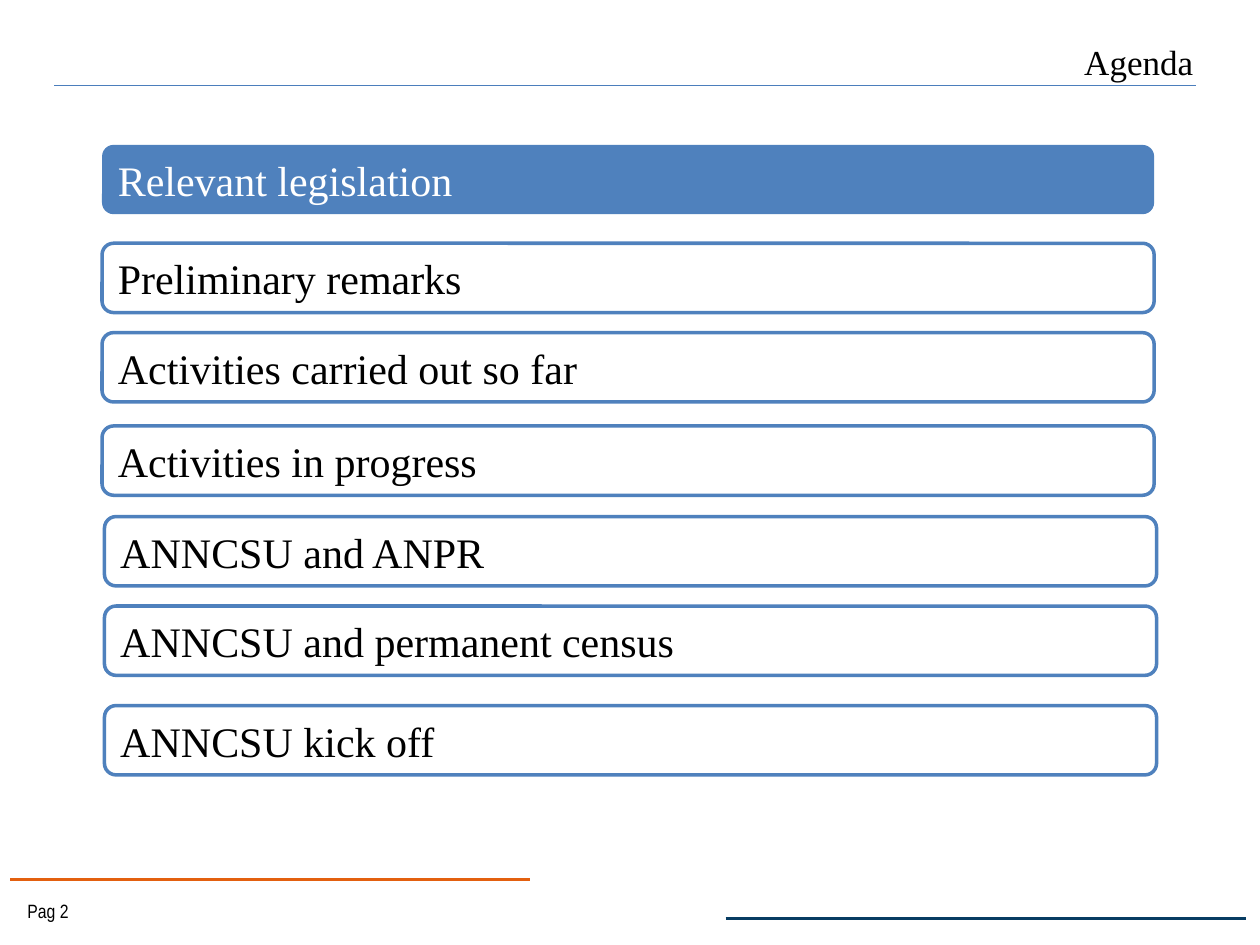
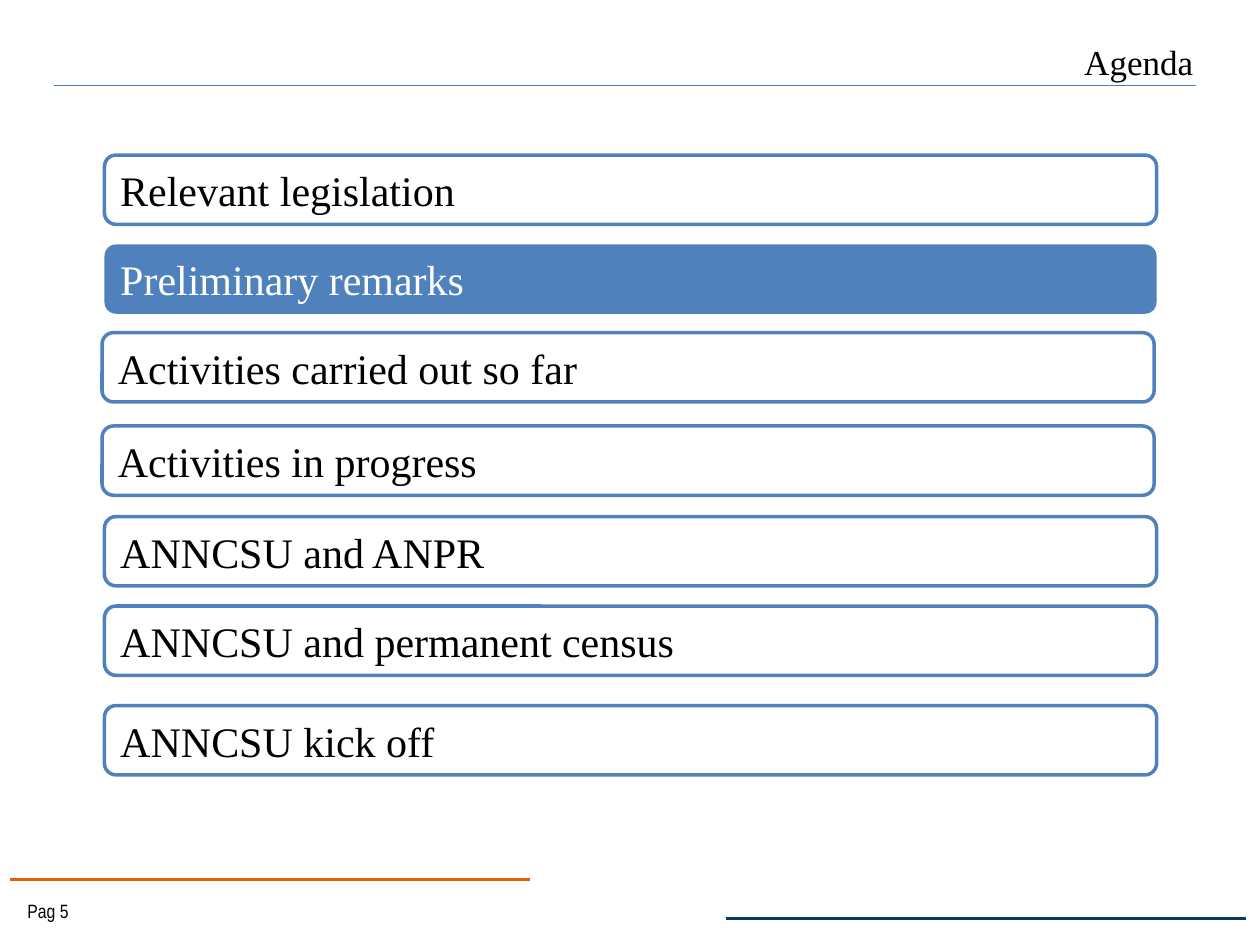
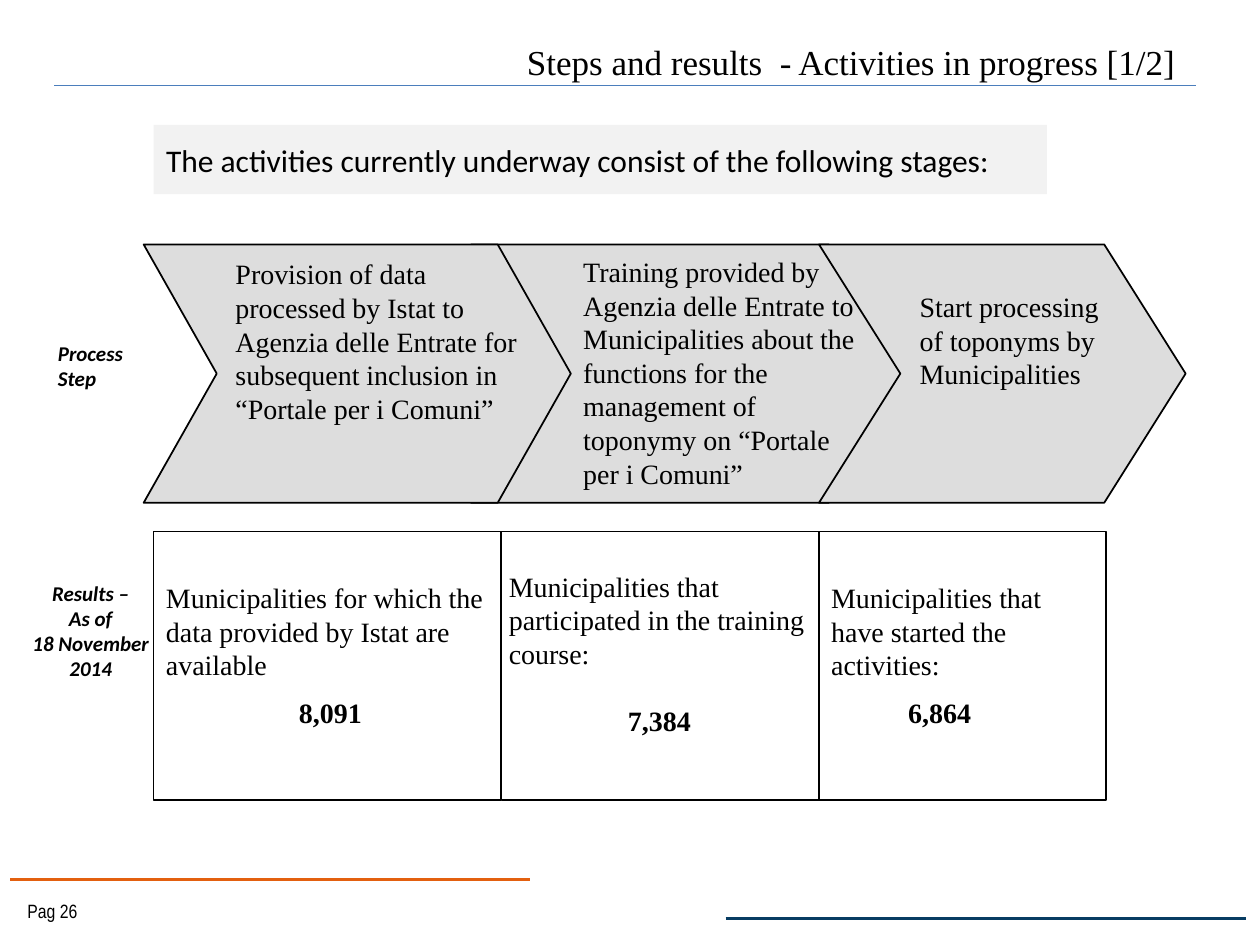
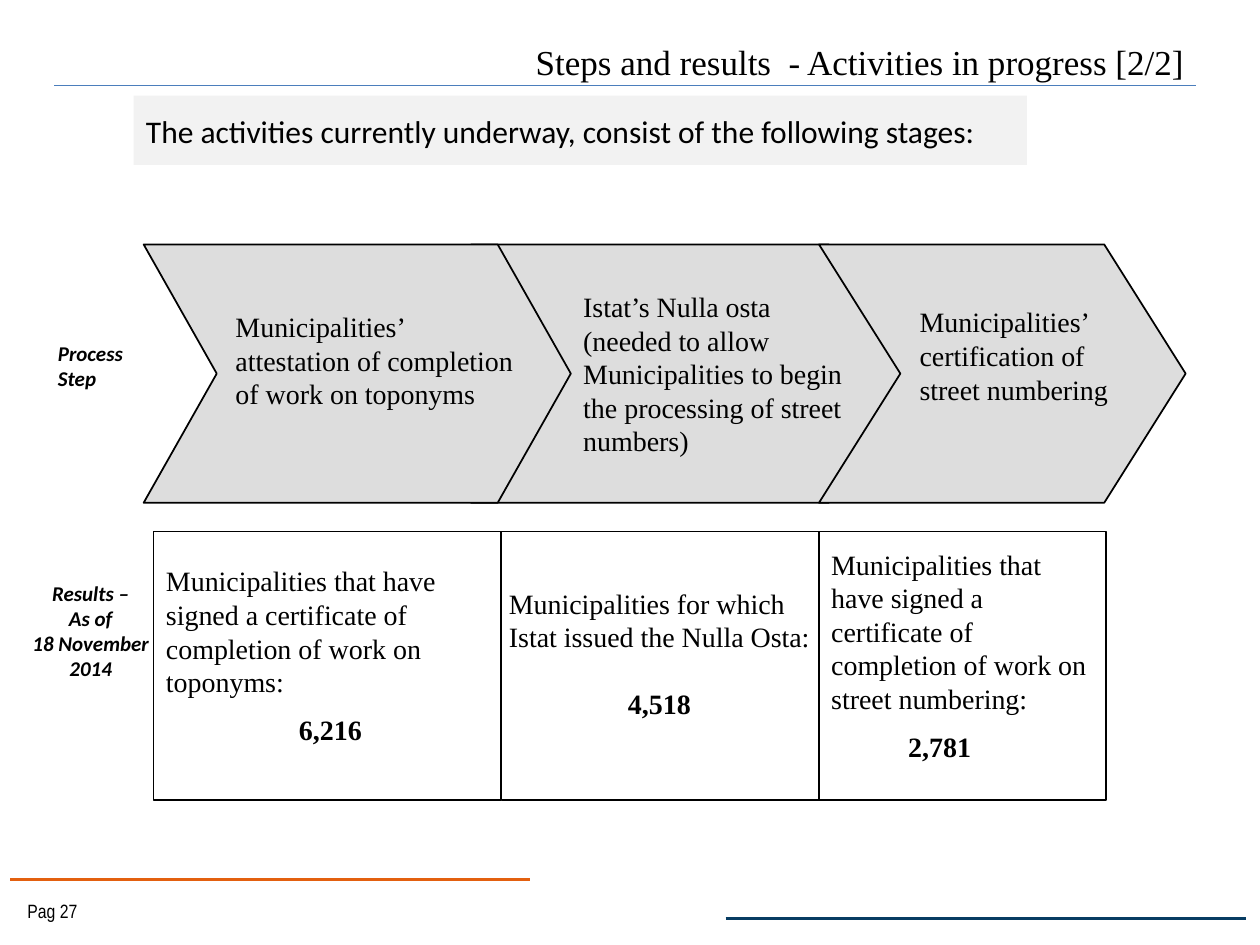
from dataclasses import dataclass

from lxml import etree
from pptx import Presentation
from pptx.dml.color import RGBColor
from pptx.enum.shapes import MSO_CONNECTOR, MSO_SHAPE
from pptx.enum.text import MSO_ANCHOR, PP_ALIGN
from pptx.oxml.ns import qn
from pptx.util import Pt

STRAIGHT = MSO_CONNECTOR.STRAIGHT
RECTANGLE = MSO_SHAPE.RECTANGLE
ROUNDED = MSO_SHAPE.ROUNDED_RECTANGLE
CHEVRON = MSO_SHAPE.CHEVRON
TOP, MIDDLE = MSO_ANCHOR.TOP, MSO_ANCHOR.MIDDLE
LEFT, CENTER, RIGHT = PP_ALIGN.LEFT, PP_ALIGN.CENTER, PP_ALIGN.RIGHT

SERIF, SANS, NARROW = "Times New Roman", "Calibri", "Arial Narrow"
BLACK, WHITE = "000000", "FFFFFF"
BLUE, RULE_BLUE = "4F81BD", "4B7EBC"
ORANGE, NAVY = "E3600F", "073C62"
PALE_GREY, STEP_GREY = "F2F2F2", "DDDDDD"
MARGINS = (7.2, 3.6, 7.2, 3.6)
NO_MARGINS = (0, 0, 0, 0)

AGENDA = [
    "Relevant legislation",
    "Preliminary remarks",
    "Activities carried out so far",
    "Activities in progress",
    "ANNCSU and ANPR",
    "ANNCSU and permanent census",
    "ANNCSU kick off",
]


@dataclass
class Box:
    """A region in points."""
    left: float
    top: float
    width: float
    height: float

    def inner(self, left, top, width, height):
        """A region placed from this one's top left corner."""
        return Box(self.left + left, self.top + top, width, height)

    def lengths(self):
        return [Pt(value) for value in (self.left, self.top, self.width, self.height)]


# Agenda positions: the lower rows are the same on both agenda slides.
ROW_SIZE = (601.2, 39.6)
LOWER_ROWS = [(0, 107.3), (0, 160.6), (1.4, 212.4), (1.4, 263.5), (1.4, 320.4)]
AGENDA_BOX = Box(58.3, 82.8, 602.6, 360)

STEPS_BOX = Box(82.1, 139.7, 595.4, 147.6)
RESULTS_BOX = Box(87.8, 303.8, 544.3, 153.4)


def color(value):
    return RGBColor.from_string(value)


def set_text(shape, lines, size, font=SERIF, text_color=BLACK, align=LEFT,
             anchor=TOP, margins=MARGINS, emphasis=None):
    frame = shape.text_frame
    frame.word_wrap = True
    frame.vertical_anchor = anchor
    (frame.margin_left, frame.margin_top,
     frame.margin_right, frame.margin_bottom) = [Pt(margin) for margin in margins]
    frame.text = "\n".join(lines)
    for paragraph in frame.paragraphs:
        paragraph.alignment = align
        paragraph.font.name = font
        paragraph.font.size = Pt(size)
        paragraph.font.bold = emphasis
        paragraph.font.italic = emphasis
        paragraph.font.color.rgb = color(text_color)
    return frame


def add_text(slide, box, lines, size, **style):
    set_text(slide.shapes.add_textbox(*box.lengths()), lines, size, **style)


def add_panel(slide, kind, box, fill=None, line=None, line_width=1):
    shape = slide.shapes.add_shape(kind, *box.lengths())
    shape.shadow.inherit = False
    if fill:
        shape.fill.solid()
        shape.fill.fore_color.rgb = color(fill)
    else:
        shape.fill.background()
    if line:
        shape.line.color.rgb = color(line)
        shape.line.width = Pt(line_width)
    else:
        shape.line.fill.background()
    return shape


def add_rule(slide, left, right, top, line, width):
    rule = slide.shapes.add_connector(STRAIGHT, Pt(left), Pt(top), Pt(right), Pt(top))
    rule.line.color.rgb = color(line)
    rule.line.width = Pt(width)
    etree.SubElement(rule.element.spPr, qn("a:effectLst"))


def add_base_slide(presentation, title, page, title_gap=0):
    """Blank slide with title, rules and page number; title_gap moves the title left."""
    slide = presentation.slides.add_slide(presentation.slide_layouts[6])
    add_rule(slide, 31, 683.3, 49, RULE_BLUE, 0.75)
    add_rule(slide, 5.8, 303.1, 502.6, ORANGE, 2)
    add_rule(slide, 414.7, 712.1, 524.9, NAVY, 2)
    add_text(slide, Box(8.6, 510.5, 84.2, 20.2), [f"Pag {page}"], 11, font=NARROW)
    add_text(slide, Box(77, 15.1, 612, 39.6), [title], 20, align=RIGHT,
             anchor=MIDDLE, margins=(7.2, 3.6, 7.2 + title_gap, 3.6))
    return slide


def draw_agenda(slide, box, positions, current):
    for index, (topic, (left, top)) in enumerate(zip(AGENDA, positions)):
        row = box.inner(left, top, *ROW_SIZE)
        if index == current:
            shape = add_panel(slide, ROUNDED, row, fill=BLUE)
        else:
            fill = WHITE if index < 3 else None
            shape = add_panel(slide, ROUNDED, row, fill, BLUE, 2)
        set_text(shape, [topic], 24, anchor=MIDDLE,
                 text_color=WHITE if index == current else BLACK)


def draw_intro(slide, box, sentence):
    banner = add_panel(slide, RECTANGLE, box, PALE_GREY)
    set_text(banner, [sentence], 18, font=SANS, anchor=MIDDLE, margins=(7.2, 0, 7.2, 0))


def draw_steps(slide, box, steps):
    """Three overlapping chevrons, the first in front; steps are (text, top) pairs."""
    chevrons = [(187.2, 249.1, 0.304), (385.9, 209.5, 0.315), (0, 244.1, 0.283)]
    for left, width, point in chevrons:
        chevron = add_panel(slide, CHEVRON, box.inner(left, 0, width, box.height),
                            STEP_GREY, BLACK)
        chevron.adjustments[0] = point
    columns = [(45.4, 175.7), (244.1, 169.9), (436.3, 130.3)]
    for (text, top), (left, width) in zip(steps, columns):
        add_text(slide, box.inner(left, top, width, box.height - top), [text], 16)


def draw_results(slide, box, results):
    """Adjoining panels, each with a sentence and an indented bold count."""
    outer = (7.2, 3.6, 7.2, 16)
    middle = (4.3, 3.6, 4.3, 18)
    columns = [(198.7, outer, 8, 76), (181.4, middle, 19, 68), (164.2, outer, 8, 44)]
    left = 0
    for (text, count), (width, margins, gap, indent) in zip(results, columns):
        panel = add_panel(slide, RECTANGLE, box.inner(left, 0, width, box.height),
                          WHITE, BLACK)
        frame = set_text(panel, [text, count], 16, anchor=MIDDLE, margins=margins)
        total = frame.paragraphs[1]
        total.space_before = Pt(gap)
        total.font.bold = True
        total._p.get_or_add_pPr().set("marL", str(Pt(indent)))
        left += width


def draw_row_labels(slide):
    style = dict(font=SANS, anchor=MIDDLE, margins=NO_MARGINS, emphasis=True)
    add_text(slide, Box(33.1, 194.4, 60.5, 28.8), ["Process Step"], 12, **style)
    add_text(slide, Box(10.1, 331.2, 83.5, 58.3),
             ["Results –", "As of", "18 November 2014"], 12, align=CENTER, **style)


def add_agenda_slide(presentation, page, first_rows, current):
    slide = add_base_slide(presentation, "Agenda", page)
    draw_agenda(slide, AGENDA_BOX, first_rows + LOWER_ROWS, current)


def add_progress_slide(presentation, page, number, title_gap, intro_corner, intro,
                       steps, results):
    slide = add_base_slide(
        presentation, f"Steps and results  - Activities in progress [{number}/2]",
        page, title_gap)
    draw_intro(slide, Box(*intro_corner, 510.5, 39.6), intro)
    draw_steps(slide, STEPS_BOX, steps)
    draw_results(slide, RESULTS_BOX, results)
    draw_row_labels(slide)


def main():
    presentation = Presentation()
    presentation.slide_width, presentation.slide_height = Pt(720), Pt(540)

    add_agenda_slide(presentation, 2, [(0, 0), (0, 56.2)], current=0)
    add_agenda_slide(presentation, 5, [(1.4, 5.8), (1.4, 56.9)], current=1)
    add_progress_slide(
        presentation, 26, 1, 10, (87.8, 71.3),
        "The activities currently underway consist of the following stages:",
        [("Provision of data processed by Istat to Agenzia delle Entrate for "
          "subsequent inclusion in “Portale per i Comuni”", 3.6),
         ("Training provided by Agenzia delle Entrate to Municipalities about the "
          "functions for the management of toponymy on “Portale per i Comuni”", 2.2),
         ("Start processing of toponyms by Municipalities", 22.3)],
        [("Municipalities for which the data provided by Istat are available", "8,091"),
         ("Municipalities that participated in the training course:", "7,384"),
         ("Municipalities that have started the activities:", "6,864")])
    add_progress_slide(
        presentation, 27, 2, 5, (76.3, 54.7),
        "The activities currently underway, consist of the following stages:",
        [("Municipalities’ attestation of completion of work on toponyms", 33.8),
         ("Istat’s Nulla osta (needed to allow Municipalities to begin the "
          "processing of street numbers)", 22.3),
         ("Municipalities’ certification of street numbering", 31)],
        [("Municipalities that have signed a certificate of completion of work "
          "on toponyms:", "6,216"),
         ("Municipalities for which Istat issued the Nulla Osta:", "4,518"),
         ("Municipalities that have signed a certificate of completion of work "
          "on street numbering:", "2,781")])
    presentation.save("out.pptx")


if __name__ == "__main__":
    main()
